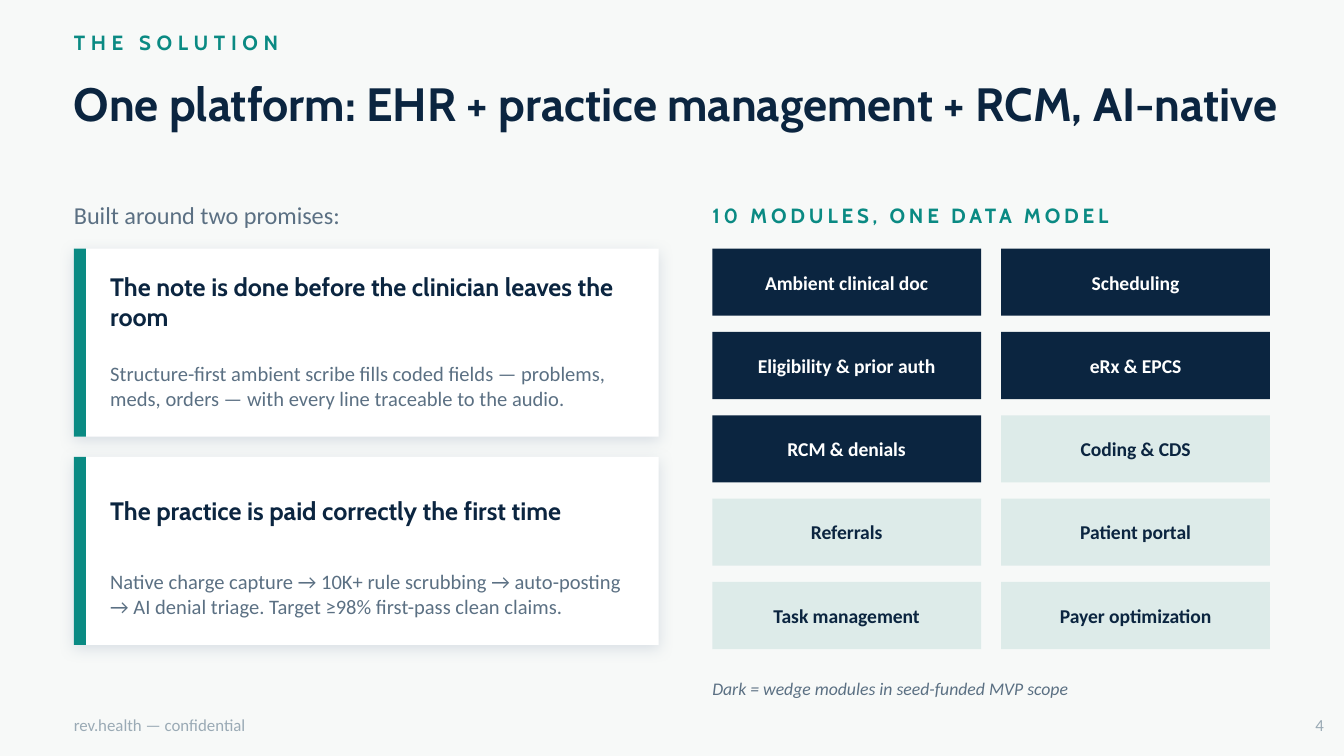
from lxml import etree
from pptx import Presentation
from pptx.dml.color import RGBColor
from pptx.enum.shapes import MSO_SHAPE
from pptx.enum.text import MSO_ANCHOR, MSO_AUTO_SIZE, PP_ALIGN
from pptx.oxml.ns import qn
from pptx.util import Pt

RECTANGLE = MSO_SHAPE.RECTANGLE
TOP, MIDDLE = MSO_ANCHOR.TOP, MSO_ANCHOR.MIDDLE
LEFT, CENTER, RIGHT = PP_ALIGN.LEFT, PP_ALIGN.CENTER, PP_ALIGN.RIGHT
NO_AUTOFIT = MSO_AUTO_SIZE.NONE
TITLE_ONLY = 5

COLORS = {
    "background": "F7F9F8",
    "navy": "0B2540",
    "teal": "0A8A83",
    "mint": "DDEBE9",
    "slate": "5B7083",
    "muted": "9AAAB5",
    "white": "FFFFFF",
    "shadow": "94A3B8",
}
HEADING_FONT, BODY_FONT = "Cabin", "Calibri"

KICKER = "THE SOLUTION"
TITLE = "One platform: EHR + practice management + RCM, AI-native"
PROMISES_LABEL = "Built around two promises:"
PROMISES = [
    ("The note is done before the clinician leaves the room",
     "Structure-first ambient scribe fills coded fields — problems, meds, orders — "
     "with every line traceable to the audio."),
    ("The practice is paid correctly the first time",
     "Native charge capture → 10K+ rule scrubbing → auto-posting → AI denial triage. "
     "Target ≥98% first-pass clean claims."),
]
MODULES_LABEL = "10 MODULES, ONE DATA MODEL"
WEDGE_MODULES = ["Ambient clinical doc", "Scheduling", "Eligibility & prior auth",
                 "eRx & EPCS", "RCM & denials"]
LATER_MODULES = ["Coding & CDS", "Referrals", "Patient portal",
                 "Task management", "Payer optimization"]
LEGEND = "Dark = wedge modules in seed-funded MVP scope"
FOOTER = "rev.health — confidential"
PAGE_NUMBER = "4"

MARGIN = 39.6
MODULES_LEFT = 381.6
LABEL_TOP, LABEL_HEIGHT = 104.4, 21.6
CONTENT_TOP = 133.2
CARD_WIDTH, CARD_HEIGHT, CARD_PITCH = 313.2, 100.8, 111.6
ACCENT_WIDTH = 6.48
CARD_TEXT_LEFT, CARD_TEXT_WIDTH = 59.04, 284.4
MODULE_WIDTH, MODULE_HEIGHT = 144, 36
MODULE_COLUMN_PITCH, MODULE_ROW_PITCH = 154.8, 44.64
MODULE_COLUMNS = 2
FOOTER_TOP, FOOTER_HEIGHT = 379.44, 18


def rgb(name):
    return RGBColor.from_string(COLORS[name])


def write(shape, text, size, color, font=BODY_FONT, bold=False, italic=False,
          align=LEFT, anchor=MIDDLE, spacing=0, inset=0):
    frame = shape.text_frame
    frame.text = text
    frame.word_wrap = True
    frame.auto_size = NO_AUTOFIT
    frame.vertical_anchor = anchor
    frame.margin_left = frame.margin_right = Pt(inset)
    frame.margin_top = frame.margin_bottom = Pt(inset / 2)
    paragraph = frame.paragraphs[0]
    paragraph.alignment = align
    run = paragraph.runs[0]
    run.font.name = font
    run.font.size = Pt(size)
    run.font.bold = bold
    run.font.italic = italic
    run.font.color.rgb = rgb(color)
    if spacing:
        run.font._element.set("spc", str(spacing * 100))


def add_text(slide, box, text, size, color, **style):
    shape = slide.shapes.add_textbox(*map(Pt, box))
    write(shape, text, size, color, **style)


def add_rectangle(slide, box, color):
    shape = slide.shapes.add_shape(RECTANGLE, *map(Pt, box))
    shape.shadow.inherit = False
    shape.fill.solid()
    shape.fill.fore_color.rgb = rgb(color)
    shape.line.fill.background()
    return shape


def add_soft_shadow(shape):
    effects = shape._element.spPr.find(qn("a:effectLst"))
    shadow = etree.SubElement(effects, qn("a:outerShdw"), blurRad=str(Pt(8)),
                              dist=str(Pt(2)), dir="5400000", algn="bl", rotWithShape="0")
    color = etree.SubElement(shadow, qn("a:srgbClr"), val=COLORS["shadow"])
    etree.SubElement(color, qn("a:alpha"), val="30000")


def add_header(slide):
    add_text(slide, (MARGIN, 15.84, 648, 20.16), KICKER, 11, "teal",
             font=HEADING_FONT, bold=True, anchor=TOP, spacing=3)
    title = slide.shapes.title
    title.left, title.top, title.width, title.height = map(Pt, (MARGIN, 40.32, 648, 57.6))
    write(title, TITLE, 25, "navy", font=HEADING_FONT, bold=True, anchor=TOP)


def add_promises(slide):
    add_text(slide, (MARGIN, LABEL_TOP, 309.6, LABEL_HEIGHT), PROMISES_LABEL, 13, "slate")
    for index, (heading, detail) in enumerate(PROMISES):
        top = CONTENT_TOP + index * CARD_PITCH
        card = add_rectangle(slide, (MARGIN, top, CARD_WIDTH, CARD_HEIGHT), "white")
        add_soft_shadow(card)
        add_rectangle(slide, (MARGIN, top, ACCENT_WIDTH, CARD_HEIGHT), "teal")
        add_text(slide, (CARD_TEXT_LEFT, top + 8.64, CARD_TEXT_WIDTH, 39.6), heading,
                 13.5, "navy", font=HEADING_FONT, bold=True)
        add_text(slide, (CARD_TEXT_LEFT, top + 48.96, CARD_TEXT_WIDTH, 48.96), detail,
                 11, "slate")


def add_modules(slide):
    add_text(slide, (MODULES_LEFT, LABEL_TOP, 302.4, LABEL_HEIGHT), MODULES_LABEL, 11, "teal",
             font=HEADING_FONT, bold=True, spacing=2)
    for index, module in enumerate(WEDGE_MODULES + LATER_MODULES):
        row, column = divmod(index, MODULE_COLUMNS)
        fill, color = ("navy", "white") if module in WEDGE_MODULES else ("mint", "navy")
        box = (MODULES_LEFT + column * MODULE_COLUMN_PITCH,
               CONTENT_TOP + row * MODULE_ROW_PITCH, MODULE_WIDTH, MODULE_HEIGHT)
        tile = add_rectangle(slide, box, fill)
        write(tile, module, 10.5, color, bold=True, align=CENTER, inset=7.2)
    add_text(slide, (MODULES_LEFT, 360, 302.4, 18), LEGEND, 9.5, "slate", italic=True)


def add_footer(slide):
    add_text(slide, (680.4, FOOTER_TOP, 28.8, FOOTER_HEIGHT), PAGE_NUMBER, 9, "muted",
             align=RIGHT)
    add_text(slide, (MARGIN, FOOTER_TOP, 216, FOOTER_HEIGHT), FOOTER, 9, "muted")


def main():
    presentation = Presentation()
    presentation.slide_width, presentation.slide_height = Pt(720), Pt(405)
    slide = presentation.slides.add_slide(presentation.slide_layouts[TITLE_ONLY])
    slide.background.fill.solid()
    slide.background.fill.fore_color.rgb = rgb("background")
    add_header(slide)
    add_promises(slide)
    add_modules(slide)
    add_footer(slide)
    presentation.save("out.pptx")


if __name__ == "__main__":
    main()
